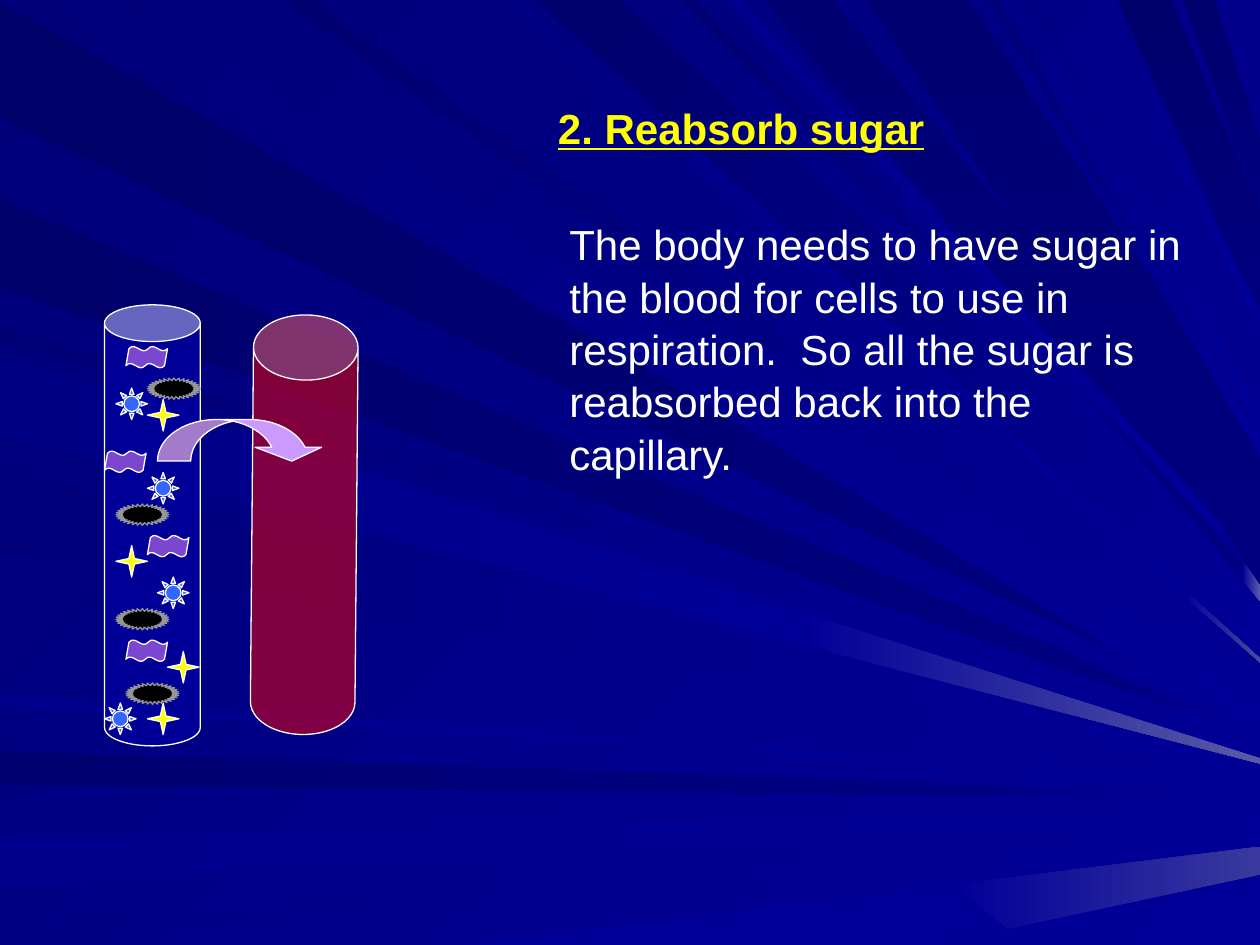
"""Build a slide on sugar reabsorption from a kidney tubule into a capillary."""
from lxml import etree
from pptx import Presentation
from pptx import util as u
from pptx.dml.color import RGBColor
from pptx.enum import shapes, text
from pptx.oxml import ns

WIDTH, HEIGHT = 10, 7.5
NAVY, BLUE = "000080", "000099"
LEFT_RAYS = [
    ("000069", NAVY, 0.02, 0.93, 5.7),
    ("000071", NAVY, 5.96, 6.23, 6.32, 7.01, BLUE),
    ("00008C", BLUE, 6.65, 7.04, 6.47),
    ("000085", BLUE, 7.35, 7.5, 6.62),
    ("000076", BLUE, 2.58, 2.7, 5.88),
    ("00006B", NAVY, 1.59, 2.28, 5.85, 8.73, BLUE),
]
TOP_RAYS = [
    ("00007B", BLUE, 0.26, 1.01, 5.63),
    ("000083", BLUE, 3.98, 4.16, 5.18, 9.45, "4A4AA1"),
    ("00006D", BLUE, 4.26, 4.92, 4.93),
    ("000073", BLUE, 5.4, 5.52, 4.63),
    ("000073", NAVY, 6.06, 6.61, 4.46, 9.86, "5A5AA6"),
    ("00006B", NAVY, 8.87, 9.3, 2.1),
    ("00006D", NAVY, 9.39, 9.64, 1.4),
    ("000070", BLUE, 2.25, 2.47, 5.5),
    ("00008E", BLUE, 5.77, 5.88, 4.54),
    ("000073", NAVY, 6.86, 7.7, 4.09),
    ("000078", BLUE, 7.85, 7.92, 3.57),
    ("000085", BLUE, 8.15, 8.24, 3.35),
    ("00008A", BLUE, 8.65, 8.72, 2.53),
]
FRONT_RAYS = [
    ("00007E", BLUE, 2.78, 3.42, 6),
    ("00007B", BLUE, 3.74, 4.37, 6.06),
    ("00008E", BLUE, 5.52, 5.6, 6.22),
    ("000085", BLUE, 2.83, 3.47, 6.04, 6.35, "5A5AA6"),
]
BOTTOM_BAND = [
    (BLUE, BLUE, [(3.64, HEIGHT), (7.56, 7.02), (8, 7.37), (7.42, HEIGHT)]),
    (BLUE, "39399E", [(7.56, 7.02), (WIDTH, 6.72), (WIDTH, 6.94), (8, 7.37)]),
]
TEXTS = [
    ("2. Reabsorb sugar", (4.33, 0.75, 5.08, 0.5), "FFFF00", True),
    ("The body needs to have sugar in the blood for cells to use in respiration.  "
     "So all the sugar is reabsorbed back into the capillary.",
     (4.42, 1.67, 5.08, 2.12), "FFFFFF", False),
]
KINDS = {
    "capillary": ("CAN", (0.83, 3.33), [0.623], "FF0000", "FFFFFF"),
    "tubule": ("CAN", (0.76, 3.5), [0.383], BLUE, "FFFFFF"),
    "sun": ("SUN", (0.25, 0.25), [], "3366FF", "FFFFFF"),
    "star": ("STAR_4_POINT", (0.25, 0.25), [], "FFFF00", "FFFFFF"),
    "wave": ("DOUBLE_WAVE", (0.33, 0.17), [0.103, -0.036], "7B46D0", "FFFFFF"),
    "cell": ("STAR_32_POINT", (0.42, 0.17), [], "000000", "969696"),
    "arrow": ("CURVED_DOWN_ARROW", (1.33, 0.33), [0.8, 1.6, 0.333], "CC99FF", "FFFFFF"),
}
TUBULE_PARTS = [
    ("tubule", [(0.83, 2.42)]),
    ("sun", [(0.92, 3.08), (1.17, 3.75), (0.83, 5.58), (1.25, 4.58)]),
    ("star", [(0.92, 4.33), (1.17, 3.17), (1.17, 5.58), (1.33, 5.17)]),
    ("wave", [(1, 5.08), (0.83, 3.58), (1.17, 4.25), (1, 2.75)]),
    ("cell", [(0.92, 4.83), (1, 5.42), (0.92, 4), (1.17, 3)]),
]


def inches(value):
    return u.Cm(value * 2.54)


def color(value):
    return RGBColor.from_string(value)


def paint(fill, start, end, angle=0):
    if start == end:
        fill.solid()
        fill.fore_color.rgb = color(start)
        return
    fill.gradient()
    fill.gradient_angle = (360 - angle) % 360
    for stop, value in zip(fill.gradient_stops, (start, end)):
        stop.color.rgb = color(value)


def add_polygon(slide, start, end, points, angle=0):
    corners = [(inches(x), inches(y)) for x, y in points]
    builder = slide.shapes.build_freeform(*corners[0])
    builder.add_line_segments(corners[1:], close=True)
    shape = builder.convert_to_shape()
    shape.shadow.inherit = False
    shape.line.fill.background()
    paint(shape.fill, start, end, angle)


def add_ray(slide, from_top, start, end, first, last, tip, split=WIDTH, glow=None):
    if from_top:
        half = (last - first) * tip / (WIDTH - first) / 2
        angle = 45 if end == BLUE else 90
        bases, tips = [(first, 0), (last, 0)], [tip + half, tip - half]
    else:
        angle = 0
        bases, tips = [(0, first), (0, last)], [tip - 0.02, tip + 0.02]
    ends = [(WIDTH, y) for y in tips]
    middles = [(split, y + (tip_y - y) * (split - x) / (WIDTH - x))
               for (x, y), tip_y in zip(bases, tips)]
    add_polygon(slide, start, end, bases + middles[::-1], angle)
    if glow:
        add_polygon(slide, BLUE if from_top else end, glow, middles + ends[::-1], angle % 90)


def add_part(parent, kind, left, top):
    preset, size, adjustments, fill, line = KINDS[kind]
    shape = parent.shapes.add_shape(
        shapes.MSO_SHAPE[preset], *map(inches, (left, top, *size)))
    for index, value in enumerate(adjustments):
        shape.adjustments[index] = value
    shape.shadow.inherit = False
    paint(shape.fill, fill, fill)
    shape.line.color.rgb = color(line)
    shape.line.width = u.Pt(0.75)
    return shape


def add_text(slide, words, box, value, heading):
    frame = slide.shapes.add_textbox(*map(inches, box)).text_frame
    frame.word_wrap = True
    frame.auto_size = text.MSO_AUTO_SIZE.SHAPE_TO_FIT_TEXT
    paragraph = frame.paragraphs[0]
    paragraph.line_spacing = 1.04
    run = paragraph.add_run()
    run.text = words
    run.font.name = "Arial"
    run.font.size = u.Pt(24)
    run.font.color.rgb = color(value)
    run.font.bold = run.font.underline = heading


def main():
    presentation = Presentation()
    presentation.slide_width, presentation.slide_height = inches(WIDTH), inches(HEIGHT)
    slide = presentation.slides.add_slide(presentation.slide_layouts[6])
    paint(slide.background.fill, "000078", BLUE, 45)
    for from_top, rays in ((False, LEFT_RAYS), (True, TOP_RAYS), (False, FRONT_RAYS)):
        for ray in rays:
            add_ray(slide, from_top, *ray)
    for piece in BOTTOM_BAND:
        add_polygon(slide, *piece)
    for entry in TEXTS:
        add_text(slide, *entry)
    capillary = add_part(slide, "capillary", 2, 2.5)
    capillary.rotation = 0.5
    tint = capillary.fill._xPr.find(".//" + ns.qn("a:srgbClr"))
    etree.SubElement(tint, ns.qn("a:alpha"), val="50000")
    tubule = slide.shapes.add_group_shape()
    for kind, places in TUBULE_PARTS:
        for place in places:
            add_part(tubule, kind, *place)
    add_part(slide, "arrow", 1.25, 3.33)
    presentation.save("out.pptx")


if __name__ == "__main__":
    main()
